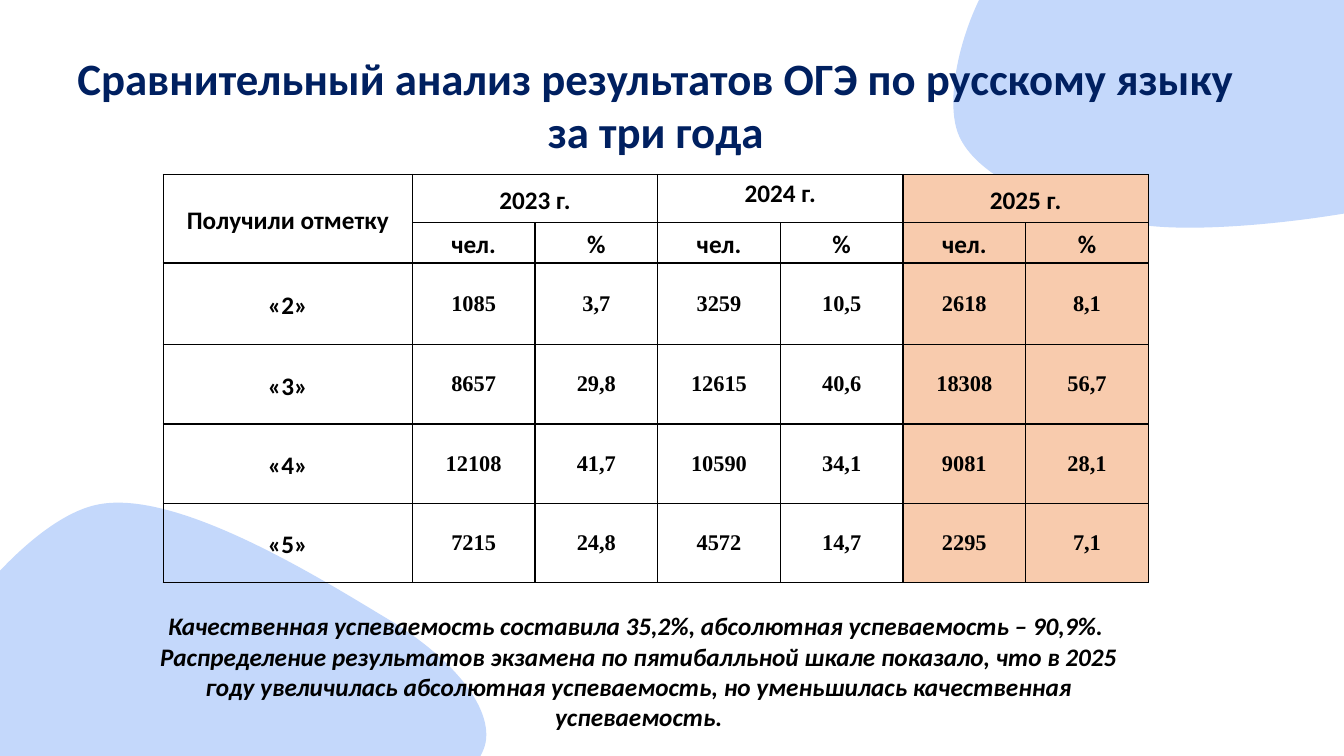
"""Builds a slide comparing Russian language exam results over three years."""
from math import cos, radians, sin

from lxml.etree import SubElement
from pptx import Presentation
from pptx.dml.color import RGBColor
from pptx.enum.text import MSO_ANCHOR as Anchor, MSO_AUTO_SIZE as AutoSize, PP_ALIGN as Align
from pptx.oxml.ns import qn
from pptx.util import Inches, Pt

WIDTH, HEIGHT = 13.33, 7.5
NAVY, BLACK, BLUE, PEACH = "002060", "000000", "C4D8FB", "F8CBAD"

TITLE = "Сравнительный анализ результатов ОГЭ по русскому языку за три года"
SUMMARY = [
    "Качественная успеваемость составила 35,2%, абсолютная успеваемость – 90,9%. ",
    "Распределение результатов экзамена по пятибалльной шкале показало, что в 2025 году "
    "увеличилась абсолютная успеваемость, но уменьшилась качественная успеваемость.",
]
YEARS = ["2023 г.", "2024 г.", "2025 г."]
RESULTS = [
    ["«2»", "1085", "3,7", "3259", "10,5", "2618", "8,1"],
    ["«3»", "8657", "29,8", "12615", "40,6", "18308", "56,7"],
    ["«4»", "12108", "41,7", "10590", "34,1", "9081", "28,1"],
    ["«5»", "7215", "24,8", "4572", "14,7", "2295", "7,1"],
]
ROWS = [
    ["Получили отметку"] + [text for year in YEARS for text in (year, "")],
    [""] + ["чел.", "%"] * len(YEARS),
    *RESULTS,
]
TABLE_LEFT, TABLE_TOP, TABLE_WIDTH, TABLE_HEIGHT = 1.62, 1.73, 9.77, 4.05
MARK_WIDTH = 2.47
TOP_HEIGHTS = [0.48, 0.4, 0.81]
MARK_HEIGHT = (TABLE_HEIGHT - sum(TOP_HEIGHTS)) / 3
ROW_HEIGHTS = TOP_HEIGHTS + [MARK_HEIGHT] * 3

BLOB_TURN = 48.6
BLOBS = [
    ((9.55, -1.07, 4.66, 4.1),
     [(10.29, -0.69),
      (10.88, -1.01), (12.38, -0.84), (13.05, -0.56), (13.73, -0.28), (14.12, 0.58), (14.33, 0.98),
      (14.54, 1.39), (14.8, 1.67), (14.31, 1.88), (13.82, 2.09), (12.2, 2.33), (11.39, 2.24),
      (10.59, 2.15), (9.68, 1.8), (9.5, 1.32), (9.32, 0.83), (9.7, -0.38), (10.29, -0.69)]),
    ((-0.45, 4.8, 4.59, 4.55),
     [(0.95, 5.01),
      (1.74, 4.83), (3.21, 5.76), (3.86, 6.15), (4.5, 6.54), (4.86, 7), (4.82, 7.34),
      (4.78, 7.67), (4.25, 8.03), (3.61, 8.17), (2.97, 8.31), (1.73, 8.32), (0.97, 8.17),
      (0.22, 8.01), (-0.92, 7.77), (-0.92, 7.24), (-0.93, 6.72), (0.15, 5.19), (0.95, 5.01)]),
]


def color(value):
    """Turn a hex string into a colour."""
    return RGBColor.from_string(value)


def write(frame, lines, tint=BLACK, spacing=None, **font):
    """Write centred bold paragraphs with the given font values."""
    frame.word_wrap = True
    for index, line in enumerate(lines):
        para = frame.add_paragraph() if index else frame.paragraphs[0]
        para.alignment = Align.CENTER
        para.line_spacing = spacing
        span = para.add_run()
        span.text = line
        for name, value in {"bold": True, "name": "Calibri", **font}.items():
            setattr(span.font, name, value)
        span.font.color.rgb = color(tint)


def turn_back(node, box):
    """Give a node's place inside its box before the box is turned."""
    left, top, width, height = box
    across, down = node[0] - left - width / 2, node[1] - top - height / 2
    angle = radians(BLOB_TURN)
    return (Inches(width / 2 + across * cos(angle) + down * sin(angle)),
            Inches(height / 2 - across * sin(angle) + down * cos(angle)))


def add_blob(page, box, nodes):
    """Draw a turned, curved blob on the layout behind the slide."""
    left, top, width, height = map(Inches, box)
    builder = page.shapes.build_freeform(left, top)
    builder.add_line_segments(
        [(left + width, top), (left + width, top + height), (left, top + height)])
    blob = builder.convert_to_shape()
    blob.shadow.inherit = False
    blob.fill.solid()
    blob.fill.fore_color.rgb = color(BLUE)
    blob.line.fill.background()
    blob.rotation = BLOB_TURN

    outline = next(blob._element.iter(qn("a:path")))
    for command in list(outline):
        outline.remove(command)
    places = [turn_back(node, box) for node in nodes]
    commands = [("moveTo", places[:1])]
    commands += [("cubicBezTo", places[start:start + 3]) for start in range(1, len(places), 3)]
    commands += [("close", [])]
    for name, points in commands:
        command = SubElement(outline, qn(f"a:{name}"))
        for x, y in points:
            SubElement(command, qn("a:pt"), x=str(x), y=str(y))
    page.slide_layout.shapes._spTree.insert(2, blob._element)


def add_borders(cell):
    """Give a cell thin black lines on every side."""
    properties = cell._tc.get_or_add_tcPr()
    for side in ("lnL", "lnR", "lnT", "lnB"):
        line = SubElement(properties, qn(f"a:{side}"), w=str(Pt(1)))
        SubElement(SubElement(line, qn("a:solidFill")), qn("a:srgbClr"), val=BLACK)


def fill_cell(cell, text, row, column):
    """Format one table cell and write its text."""
    add_borders(cell)
    if column >= 5:
        cell.fill.solid()
        cell.fill.fore_color.rgb = color(PEACH)
    else:
        cell.fill.background()
    cell.margin_left = cell.margin_right = Inches(0.07)
    cell.margin_top = cell.margin_bottom = 0
    cell.vertical_anchor = Anchor.TOP if (row, column) == (0, 3) else Anchor.MIDDLE
    if not text:
        return
    if row >= 2 and column:
        write(cell.text_frame, [text], size=Pt(16), name="Times New Roman")
    else:
        write(cell.text_frame, [text], spacing=1.15, size=Pt(18))


def add_results(page):
    """Add the table of marks by year."""
    year_columns = 2 * len(YEARS)
    widths = [MARK_WIDTH] + [(TABLE_WIDTH - MARK_WIDTH) / year_columns] * year_columns
    box = map(Inches, (TABLE_LEFT, TABLE_TOP, TABLE_WIDTH, TABLE_HEIGHT))
    table = page.shapes.add_table(len(ROWS), len(widths), *box).table
    table.first_row = table.horz_banding = False
    for column, width in zip(table.columns, widths):
        column.width = Inches(width)
    for row, height in zip(table.rows, ROW_HEIGHTS):
        row.height = Inches(height)
    table.cell(0, 0).merge(table.cell(1, 0))
    for left in range(1, year_columns, 2):
        table.cell(0, left).merge(table.cell(0, left + 1))
    for row, texts in enumerate(ROWS):
        for column, text in enumerate(texts):
            fill_cell(table.cell(row, column), text, row, column)


def main():
    """Build and save the deck."""
    deck = Presentation()
    deck.slide_width, deck.slide_height = Inches(WIDTH), Inches(HEIGHT)
    page = deck.slides.add_slide(deck.slide_layouts[5])
    for box, nodes in BLOBS:
        add_blob(page, box, nodes)
    add_results(page)

    summary = page.shapes.add_textbox(Inches(1.44), Inches(6.01), Inches(9.79), Inches(1.31))
    write(summary.text_frame, SUMMARY, size=Pt(18), italic=True)

    title = page.shapes.title
    title.left, title.top, title.width, title.height = map(Inches, (0.51, 0.45, 11.99, 1.18))
    title.text_frame.auto_size = AutoSize.NONE
    title.text_frame.vertical_anchor = Anchor.TOP
    write(title.text_frame, [TITLE], NAVY, size=Pt(32))
    deck.save("out.pptx")


if __name__ == "__main__":
    main()
